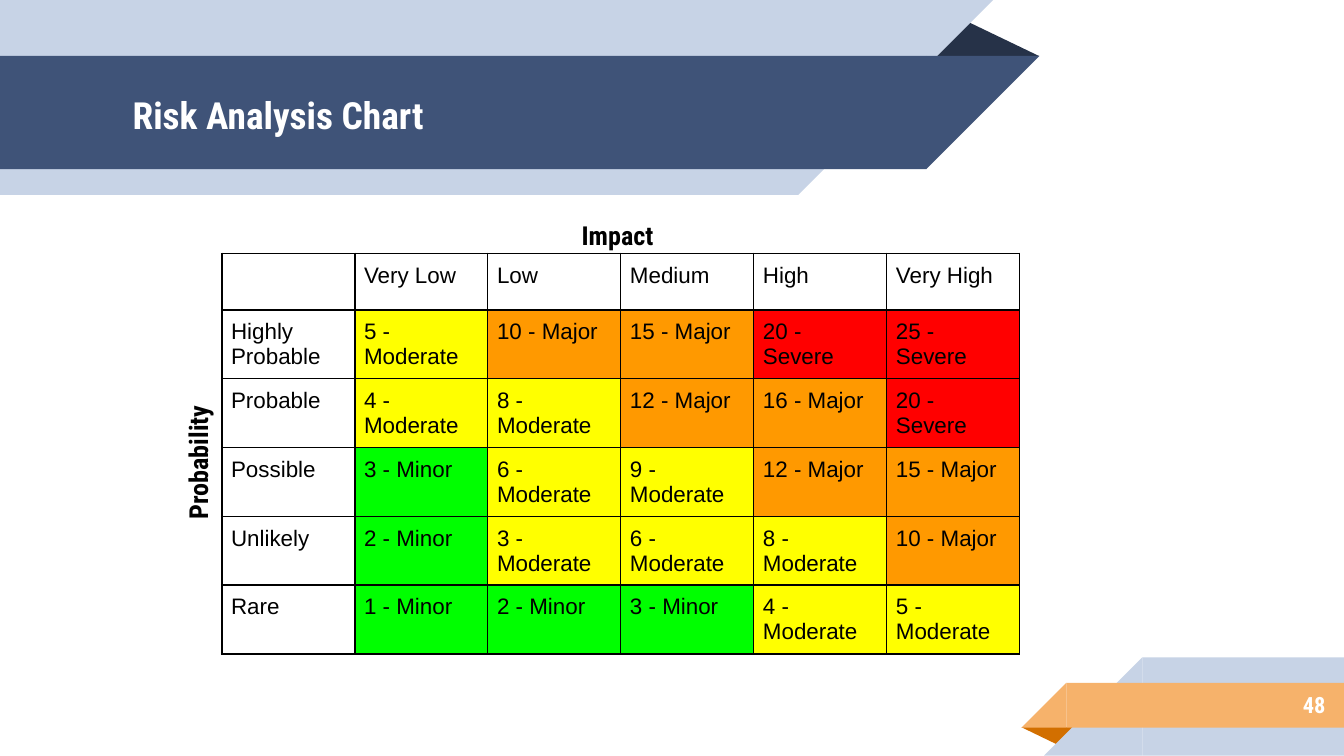
from dataclasses import dataclass
from lxml import etree
from pptx import Presentation, util as u
from pptx.dml.color import RGBColor
from pptx.enum import shapes, text
from pptx.oxml.ns import qn

Kind = shapes.MSO_SHAPE
Align = text.PP_ALIGN
HEAD = "Roboto Condensed"
PALE, NAVY, DARK = "C7D3E6", "3F5378", "263248"
PEACH, RUST = "F6B26B", "D26F00"
BLACK, WHITE = "000000", "FFFFFF"


@dataclass
class Part:
    kind: Kind
    left: float
    top: float
    width: float
    height: float
    fill: str
    turn: int = 0


@dataclass
class Label:
    words: str
    left: float
    top: float
    width: float
    height: float
    size: int
    color: str
    middle: bool = False
    align: Align = Align.LEFT
    turn: int = 0


def band(left: float, top: float, width: float, height: float,
         fill: str, slope: str) -> list[Part]:
    if slope == "right":
        tip, turn = left + width, 90
    else:
        tip, turn = left - height, 270
    return [Part(Kind.RECTANGLE, left, top, width, height, fill),
            Part(Kind.RIGHT_TRIANGLE, tip, top, height, height, fill, turn)]


PARTS = [
    Part(Kind.ISOSCELES_TRIANGLE, 547.2, 389.6, 31, 10.2, RUST, 180),
    *band(612, 352.2, 108, 52.6, PALE, "left"),
    *band(571.2, 365.8, 148.8, 24, PEACH, "left"),
    Part(Kind.ISOSCELES_TRIANGLE, 495.4, 10, 61.2, 20, DARK),
    *band(0, 0, 427.6, 104.4, PALE, "right"),
    *band(0, 30, 496.2, 60.6, NAVY, "right"),
]

LABELS = [
    Label("Risk Analysis Chart", 64, 31, 432.8, 60.6, 20, WHITE, True),
    Label("48", 599.8, 365, 117.4, 25.2, 12, WHITE, True, Align.RIGHT),
    Label("Impact", 304.5, 110.2, 57, 31.7, 14, BLACK),
    Label("Probability", 68.4, 231.8, 75.6, 31.7, 14, BLACK, turn=270),
]

LEVELS = {"Minor": "00FF00", "Moderate": "FFFF00",
          "Major": "FF9900", "Severe": "FF0000"}

ROWS = [
    ["", "Very Low", "Low", "Medium", "High", "Very High"],
    ["Highly Probable", "5 - Moderate", "10 - Major", "15 - Major",
     "20 - Severe", "25 - Severe"],
    ["Probable", "4 - Moderate", "8 - Moderate", "12 - Major",
     "16 - Major", "20 - Severe"],
    ["Possible", "3 - Minor", "6 - Moderate", "9 - Moderate",
     "12 - Major", "15 - Major"],
    ["Unlikely", "2 - Minor", "3 - Moderate", "6 - Moderate",
     "8 - Moderate", "10 - Major"],
    ["Rare", "1 - Minor", "2 - Minor", "3 - Minor",
     "4 - Moderate", "5 - Moderate"],
]


def paint(fill, color: str) -> None:
    fill.solid()
    fill.fore_color.rgb = RGBColor.from_string(color)


def style(font, name: str, size: int, color: str, bold: bool) -> None:
    font.name = name
    font.size = u.Pt(size)
    font.bold = bold
    paint(font.fill, color)


def draw_part(slide, part: Part) -> None:
    shape = slide.shapes.add_shape(
        part.kind, u.Pt(part.left), u.Pt(part.top),
        u.Pt(part.width), u.Pt(part.height))
    shape.shadow.inherit = False
    shape.rotation = part.turn
    shape.line.fill.background()
    paint(shape.fill, part.fill)
    if part.kind == Kind.ISOSCELES_TRIANGLE:
        shape.adjustments[0] = 0.32


def draw_label(slide, label: Label) -> None:
    box = slide.shapes.add_textbox(
        u.Pt(label.left), u.Pt(label.top),
        u.Pt(label.width), u.Pt(label.height))
    box.rotation = label.turn
    frame = box.text_frame
    frame.word_wrap = True
    frame.margin_left = frame.margin_right = u.Pt(7.2)
    frame.margin_top = frame.margin_bottom = u.Pt(7.2)
    if label.middle:
        frame.vertical_anchor = text.MSO_ANCHOR.MIDDLE
    else:
        frame.auto_size = text.MSO_AUTO_SIZE.SHAPE_TO_FIT_TEXT
    para = frame.paragraphs[0]
    para.text = label.words
    para.alignment = label.align
    style(para.font, HEAD, label.size, label.color, True)


def edge(cell, color: str, width: float) -> None:
    props = cell._tc.get_or_add_tcPr()
    for side in ("lnL", "lnR", "lnT", "lnB"):
        line = etree.SubElement(props, qn(f"a:{side}"), w=str(u.Pt(width)))
        solid = etree.SubElement(line, qn("a:solidFill"))
        etree.SubElement(solid, qn("a:srgbClr"), val=color)


def draw_cell(cell, words: str) -> None:
    edge(cell, BLACK, 1)
    level = words.split(" - ")[-1]
    if level in LEVELS:
        paint(cell.fill, LEVELS[level])
    else:
        cell.fill.background()
    cell.margin_left = cell.margin_right = u.Pt(5)
    cell.margin_top = cell.margin_bottom = u.Pt(5)
    para = cell.text_frame.paragraphs[0]
    para.text = words
    style(para.font, "Arial", 12, BLACK, False)


def draw_table(slide, rows: list[list[str]], left: float, top: float,
               width: float, height: float) -> None:
    wide, high = len(rows[0]), len(rows)
    table = slide.shapes.add_table(
        high, wide, u.Pt(left), u.Pt(top),
        u.Pt(width * wide), u.Pt(height * high)).table
    table.first_row = table.horz_banding = False
    for col in table.columns:
        col.width = u.Pt(width)
    for r, row in enumerate(rows):
        table.rows[r].height = u.Pt(height)
        for c, words in enumerate(row):
            draw_cell(table.cell(r, c), words)


def main() -> None:
    deck = Presentation()
    deck.slide_width, deck.slide_height = u.Pt(720), u.Pt(405)
    slide = deck.slides.add_slide(deck.slide_layouts[6])
    for part in PARTS:
        draw_part(slide, part)
    draw_table(slide, ROWS, 118.8, 135.8, 71.25, 30.2)
    for label in LABELS:
        draw_label(slide, label)
    deck.save("out.pptx")


if __name__ == "__main__":
    main()
